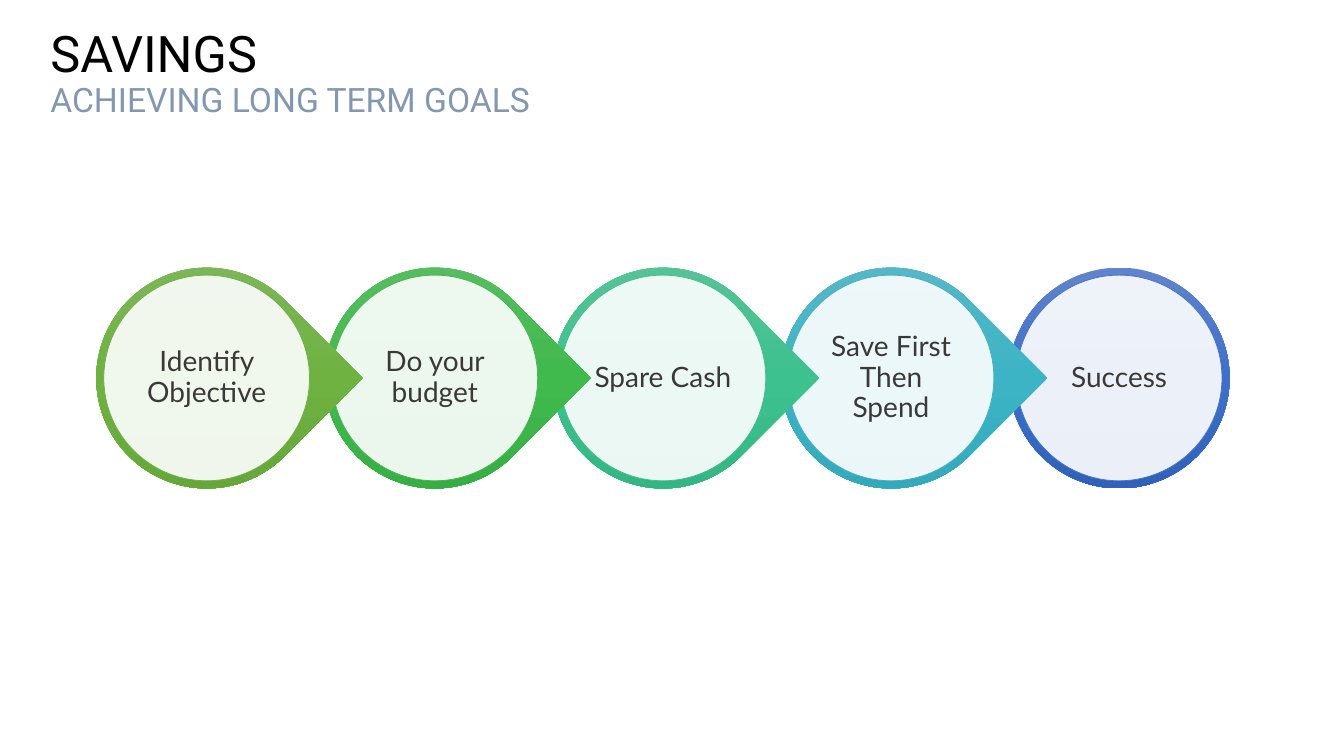
"""Build a slide of five chained savings steps that lead to success."""
from copy import deepcopy

from pptx import Presentation
from pptx.dml.color import RGBColor
from pptx.enum.shapes import MSO_SHAPE
from pptx.enum.text import MSO_ANCHOR, MSO_AUTO_SIZE, PP_ALIGN
from pptx.oxml import parse_xml
from pptx.oxml.ns import nsdecls, qn
from pptx.util import Inches, Pt

BLACK = RGBColor(0x00, 0x00, 0x00)
SLATE = RGBColor(0x84, 0x97, 0xB0)
CHARCOAL = RGBColor(0x3B, 0x38, 0x38)
WHITE = RGBColor(0xFF, 0xFF, 0xFF)
GREENS = [RGBColor(0x81, 0xB8, 0x61), RGBColor(0x6F, 0xB2, 0x42), RGBColor(0x62, 0xA3, 0x36)]
EMERALDS = [RGBColor(0x60, 0xBE, 0x68), RGBColor(0x40, 0xB9, 0x4D), RGBColor(0x34, 0xAA, 0x41)]
JADES = [RGBColor(0x60, 0xC3, 0x9A), RGBColor(0x3D, 0xC1, 0x8F), RGBColor(0x31, 0xB0, 0x80)]
TEALS = [RGBColor(0x61, 0xB8, 0xC7), RGBColor(0x3D, 0xB4, 0xC6), RGBColor(0x30, 0xA5, 0xB7)]
BLUES = [RGBColor(0x61, 0x83, 0xCB), RGBColor(0x3E, 0x70, 0xCA), RGBColor(0x30, 0x62, 0xBB)]
GREEN_EDGE = RGBColor(0x70, 0xAD, 0x47)
EMERALD_EDGE = RGBColor(0x45, 0xB4, 0x51)
JADE_EDGE = RGBColor(0x43, 0xBB, 0x8D)
TEAL_EDGE = RGBColor(0x43, 0xAF, 0xC0)
BLUE_EDGE = RGBColor(0x44, 0x72, 0xC4)

HEADING = [("SAVINGS", 36, BLACK), ("ACHIEVING LONG TERM GOALS", 24, SLATE)]
STEPS = [
    ("Identify Objective", GREENS, GREEN_EDGE),
    ("Do your budget", EMERALDS, EMERALD_EDGE),
    ("Spare Cash", JADES, JADE_EDGE),
    ("Save First Then Spend", TEALS, TEAL_EDGE),
    ("Success", BLUES, BLUE_EDGE),
]

WIDTH, HEIGHT = 13.33, 7.5
FIRST_CENTER, LAST_CENTER = 2.05, 11.1
PITCH = (LAST_CENTER - FIRST_CENTER) / (len(STEPS) - 1)
RING, DISC, LABEL = 2.19, 2.04, 1.46


def centered(center, size):
    """Return the box of a square on the slide's middle line."""
    return [Inches(v) for v in (center - size / 2, (HEIGHT - size) / 2, size, size)]


def write(frame, lines, font="Lato", align=PP_ALIGN.CENTER, inset=0.03):
    """Fill a frame with lines of (text, size, color)."""
    frame.word_wrap = True
    frame.auto_size = MSO_AUTO_SIZE.NONE
    frame.vertical_anchor = MSO_ANCHOR.MIDDLE
    frame.margin_left = frame.margin_right = Inches(inset)
    frame.margin_top = frame.margin_bottom = Inches(min(inset, 0.05))
    for index, (text, size, color) in enumerate(lines):
        paragraph = frame.add_paragraph() if index else frame.paragraphs[0]
        paragraph.alignment = align
        paragraph.line_spacing = 0.9
        paragraph.space_before = Pt(0)
        run = paragraph.add_run()
        run.text = text
        run.font.name = font
        run.font.size = Pt(size)
        run.font.color.rgb = color


def shade(shape, colors):
    """Fill a shape from top to bottom, whatever its rotation."""
    shape.fill.gradient()
    shape.fill.gradient_angle = 270
    gradient = shape.element.spPr.find(qn("a:gradFill"))
    gradient.set("rotWithShape", "0")
    stops = gradient.find(qn("a:gsLst"))
    stops.append(deepcopy(stops[-1]))
    for stop, position, color in zip(shape.fill.gradient_stops, (0, 0.5, 1), colors):
        stop.position = position
        stop.color.rgb = color


def add_step(shapes, center, text, colors, edge, is_last):
    """Draw one ring with its pale disc and label."""
    kind = MSO_SHAPE.OVAL if is_last else MSO_SHAPE.TEAR
    ring = shapes.add_shape(kind, *centered(center, RING))
    ring.shadow.inherit = False
    ring.rotation = 0 if is_last else 45
    ring.line.fill.background()
    shade(ring, colors)

    disc = shapes.add_shape(MSO_SHAPE.OVAL, *centered(center, DISC))
    disc.shadow.inherit = False
    disc.fill.solid()
    disc.fill.fore_color.rgb = WHITE
    white = disc.element.spPr.find(qn("a:solidFill"))[0]
    white.append(parse_xml(f'<a:alpha {nsdecls("a")} val="90000"/>'))
    disc.line.color.rgb = edge
    disc.line.width = Pt(0.5)

    label = shapes.add_textbox(*centered(center, LABEL))
    write(label.text_frame, [(text, 20, CHARCOAL)])


def main():
    deck = Presentation()
    deck.slide_width, deck.slide_height = Inches(WIDTH), Inches(HEIGHT)
    slide = deck.slides.add_slide(deck.slide_layouts[5])
    title = slide.shapes.title
    title.left, title.top = Inches(0.4), Inches(0.34)
    title.width, title.height = Inches(10.19), Inches(0.8)
    write(title.text_frame, HEADING, font="Roboto", align=PP_ALIGN.LEFT, inset=0.1)
    last = len(STEPS) - 1
    for index, step in reversed(list(enumerate(STEPS))):
        add_step(slide.shapes, FIRST_CENTER + index * PITCH, *step, is_last=index == last)
    deck.save("out.pptx")


if __name__ == "__main__":
    main()
